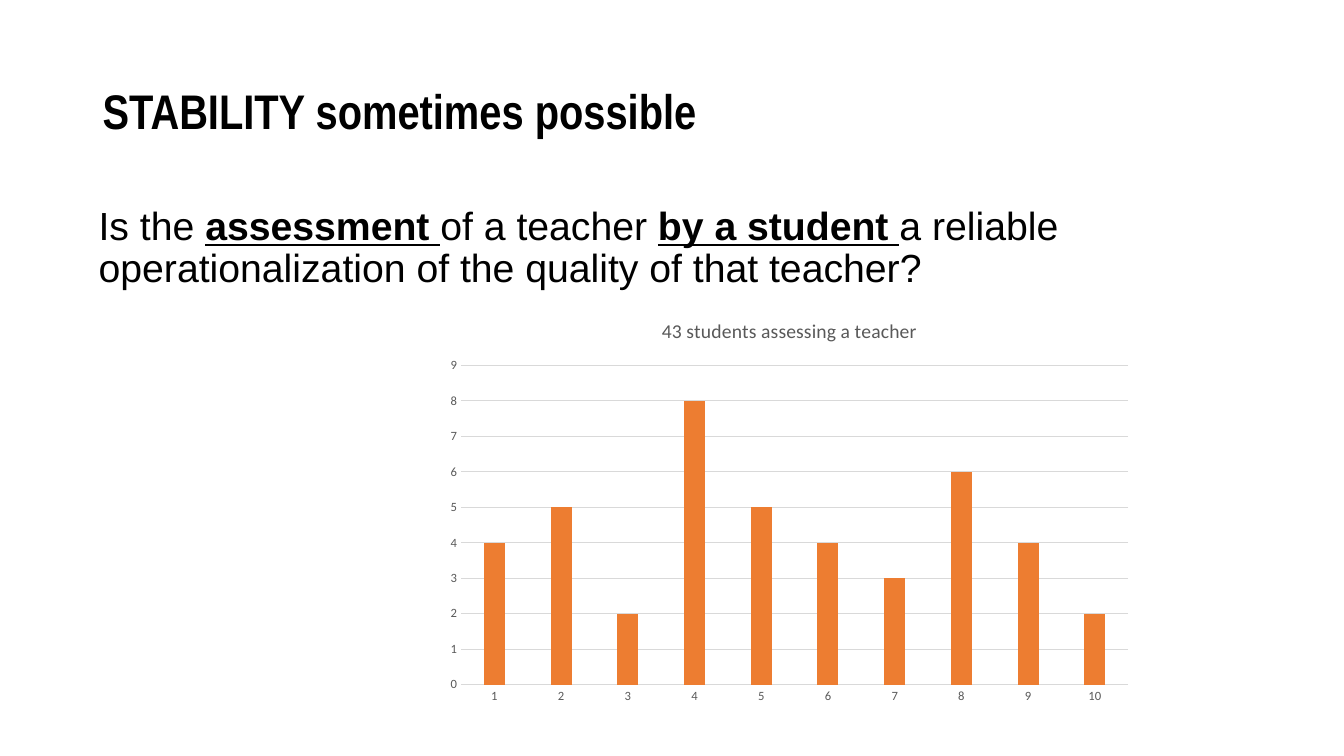
from lxml.etree import SubElement
from pptx import Presentation
from pptx.chart.data import CategoryChartData
from pptx.dml.color import RGBColor
from pptx.enum.chart import XL_CHART_TYPE, XL_TICK_MARK
from pptx.enum.text import MSO_ANCHOR
from pptx.oxml.ns import qn
from pptx.util import Inches, Pt

BLACK = RGBColor(0x00, 0x00, 0x00)
GREY = RGBColor(0x59, 0x59, 0x59)
LIGHT_GREY = RGBColor(0xD9, 0xD9, 0xD9)
ORANGE = RGBColor(0xED, 0x7D, 0x31)


def style_font(font, name, size, color, bold=False):
    font.name, font.size, font.bold = name, Pt(size), bold
    font.color.rgb = color


def add_text(slide, box, runs, name, size, anchor):
    """Add one paragraph from (text, bold, underline) runs."""
    tf = slide.shapes.add_textbox(*map(Inches, box)).text_frame
    tf.word_wrap = True
    tf.vertical_anchor = anchor
    p = tf.paragraphs[0]
    p.line_spacing = 0.9
    for text, bold, underline in runs:
        r = p.add_run()
        r.text = text
        style_font(r.font, name, size, BLACK, bold)
        r.font.underline = underline


prs = Presentation()
prs.slide_width, prs.slide_height = Inches(13.33), Inches(7.5)
s = prs.slides.add_slide(prs.slide_layouts[6])

add_text(s, (0.92, 0.4, 11.5, 1.45), [("STABILITY sometimes possible", True, False)],
         "Arial Narrow", 34.7, MSO_ANCHOR.MIDDLE)
question = [
    ("Is the ", False, False),
    ("assessment ", True, True),
    ("of a teacher ", False, False),
    ("by a student ", True, True),
    ("a reliable operationalization of the quality of that teacher?", False, False),
]
add_text(s, (0.88, 2, 11.5, 4.76), question, "Arial", 28, MSO_ANCHOR.TOP)

# Chart of the students' assessments
data = CategoryChartData()
data.categories = [str(n) for n in range(1, 11)]
data.add_series("Series 1", (4, 5, 2, 8, 5, 4, 3, 6, 4, 2))
chart = s.shapes.add_chart(XL_CHART_TYPE.COLUMN_CLUSTERED, Inches(4.33), Inches(2.98),
                           Inches(7), Inches(4.08), data).chart
style_font(chart.font, "Calibri", 10, BLACK)
chart.has_legend = False
chart.has_title = True
tf = chart.chart_title.text_frame
tf.text = "43 students assessing a teacher"
style_font(tf.paragraphs[0].runs[0].font, "Calibri", 14, GREY)
chart.chart_title.include_in_layout = False

plot = chart.plots[0]
plot.gap_width, plot.overlap = 219, -27
plot.vary_by_categories = False
fill = plot.series[0].format.fill
fill.solid()
fill.fore_color.rgb = ORANGE

for axis in (chart.category_axis, chart.value_axis):
    axis.major_tick_mark = axis.minor_tick_mark = XL_TICK_MARK.NONE
    style_font(axis.tick_labels.font, "Calibri", 9, GREY)
chart.value_axis.minimum_scale, chart.value_axis.maximum_scale = 0, 9
chart.value_axis.major_unit = 1
chart.value_axis.format.line.fill.background()
for line in (chart.category_axis.format.line, chart.value_axis.major_gridlines.format.line):
    line.color.rgb = LIGHT_GREY
    line.width = Pt(0.75)

prs.save("out.pptx")
